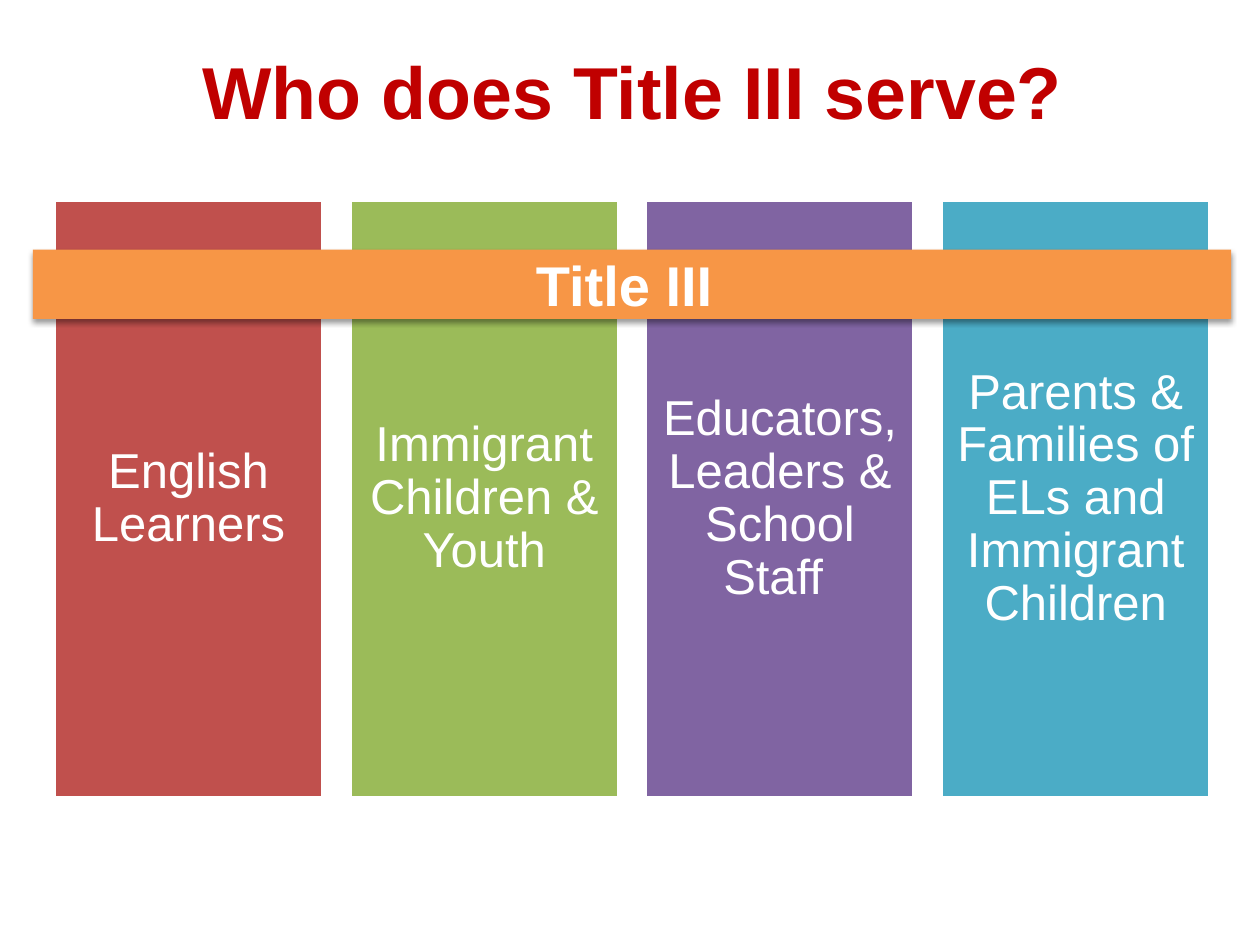
from lxml import etree
from pptx import Presentation
from pptx.dml.color import RGBColor
from pptx.enum.shapes import MSO_SHAPE as Shape
from pptx.enum.text import MSO_ANCHOR as Anchor, PP_ALIGN as Align
from pptx.oxml.ns import qn
from pptx.util import Pt

WHITE = RGBColor(0xFF, 0xFF, 0xFF)
DARK_RED = RGBColor(0xC0, 0x00, 0x00)
RED = RGBColor(0xC0, 0x50, 0x4D)
GREEN = RGBColor(0x9B, 0xBB, 0x59)
PURPLE = RGBColor(0x80, 0x64, 0xA2)
TEAL = RGBColor(0x4B, 0xAC, 0xC6)
ORANGE = RGBColor(0xF7, 0x96, 0x46)

HEADING = "Who does Title III serve?"
PROGRAM = "Title III "
GROUPS = [
    ("English Learners", RED),
    ("Immigrant Children & Youth", GREEN),
    ("Educators, Leaders & School Staff ", PURPLE),
    ("Parents & Families of ELs and Immigrant Children", TEAL),
]

COLUMN_LEFT, COLUMN_TOP, COLUMN_PITCH = 31, 114.5, 169
COLUMN_WIDTH, COLUMN_HEIGHT = 153.4, 341.3


def write(shape, text, size, color=WHITE, bold=False, margin=0, spacing=1.0):
    """Put one centred paragraph in the shape, with equal margins."""
    frame = shape.text_frame
    frame.word_wrap = True
    frame.vertical_anchor = Anchor.MIDDLE
    for side in ("left", "top", "right", "bottom"):
        setattr(frame, f"margin_{side}", Pt(margin))
    paragraph = frame.paragraphs[0]
    paragraph.text = text
    paragraph.alignment = Align.CENTER
    paragraph.line_spacing = spacing
    font = paragraph.runs[0].font
    for name, value in {"name": "Arial", "size": Pt(size), "bold": bold}.items():
        setattr(font, name, value)
    font.color.rgb = color


def add_block(slide, box, fill):
    block = slide.shapes.add_shape(Shape.RECTANGLE, *map(Pt, box))
    block.shadow.inherit = False
    block.fill.solid()
    block.fill.fore_color.rgb = fill
    return block


def add_drop_shadow(shape):
    effects = shape._element.spPr.find(qn("a:effectLst"))
    shadow = etree.SubElement(effects, qn("a:outerShdw"), blurRad=str(Pt(3.1)),
                              dist=str(Pt(1.6)), dir="5400000", rotWithShape="0")
    color = etree.SubElement(shadow, qn("a:srgbClr"), val="000000")
    etree.SubElement(color, qn("a:alpha"), val="38000")


def main():
    deck = Presentation()
    deck.slide_width, deck.slide_height = Pt(720), Pt(540)
    slide = deck.slides.add_slide(deck.slide_layouts[6])

    heading = slide.shapes.add_textbox(Pt(37.4), Pt(26), Pt(648), Pt(51))
    write(heading, HEADING, 42, DARK_RED, bold=True)

    for index, (group, fill) in enumerate(GROUPS):
        left = COLUMN_LEFT + index * COLUMN_PITCH
        column = add_block(slide, (left, COLUMN_TOP, COLUMN_WIDTH, COLUMN_HEIGHT), fill)
        column.line.color.rgb = WHITE
        column.line.width = Pt(2)
        write(column, group, 28, margin=8.4, spacing=0.9)

    banner = add_block(slide, (18.8, 142.7, 684.7, 39.6), ORANGE)
    banner.line.fill.background()
    add_drop_shadow(banner)
    write(banner, PROGRAM, 32, bold=True)

    deck.save("out.pptx")


if __name__ == "__main__":
    main()
